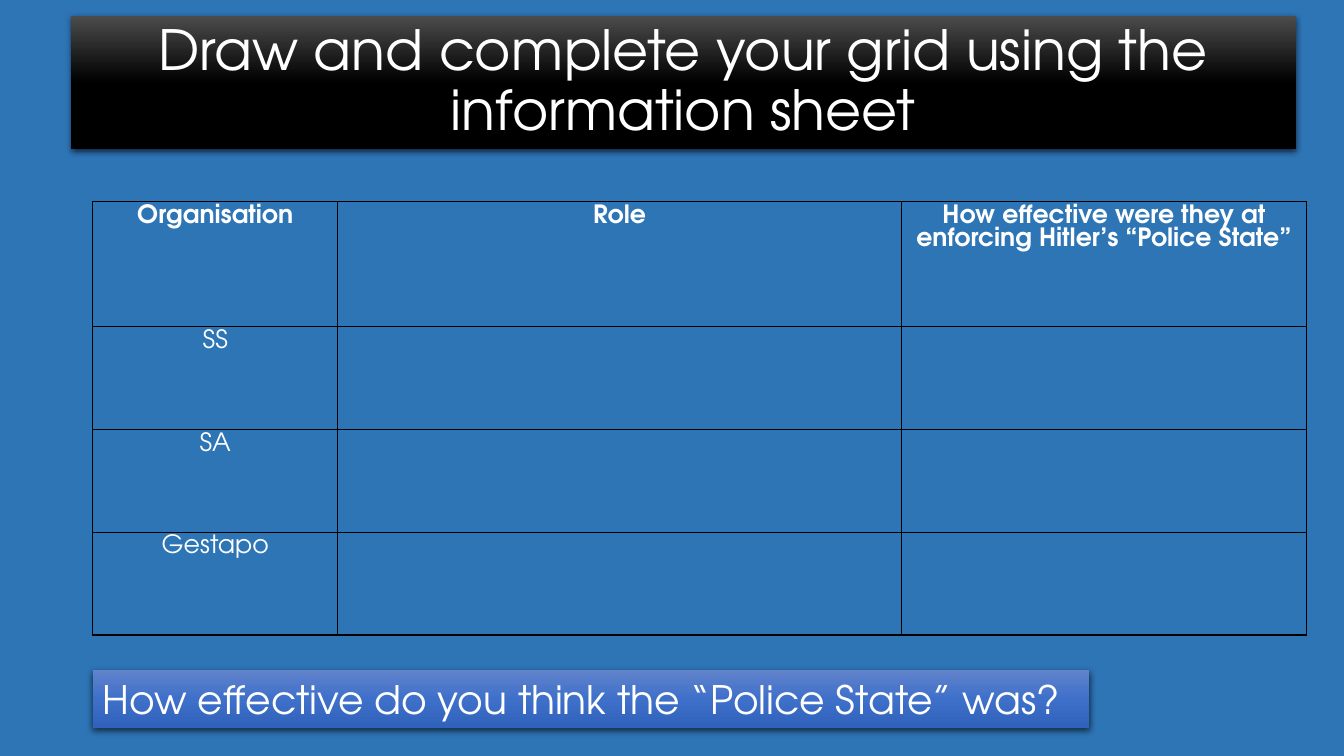
from copy import deepcopy

from pptx import Presentation
from pptx import util as u
from pptx.dml.color import RGBColor
from pptx.enum import text
from pptx.oxml import parse_xml
from pptx.oxml.ns import nsdecls, qn

PX = 9144  # EMU per px: 100 px to the inch
FONT = "TeX Gyre Adventor"
WHITE, BLACK, BLUE = "FFFFFF", "000000", "2E75B6"
HEADER_GRADIENT = ("4B4B4B", "000000", "000000")
QUESTION_GRADIENT = ("6183CB", "3E70CA", "3062BB")

COLUMN_WIDTHS = (243, 559, 402)
HEADER_HEIGHT, ROW_HEIGHT = 124, 102
HEADINGS = ("Organisation", "Role",
            "How effective were they at enforcing Hitler’s “Police State”")
ORGANISATIONS = ("SS", "SA", "Gestapo")


def px(length):
    return u.Emu(length * PX)


def color(value):
    return RGBColor.from_string(value)


def write(frame, words, size, align, bold=False, spacing=1.0):
    paragraph = frame.paragraphs[0]
    paragraph.alignment = align
    paragraph.line_spacing = spacing
    run = paragraph.add_run()
    run.text = words
    run.font.name = FONT
    run.font.size = u.Pt(size)
    run.font.bold = bold
    run.font.color.rgb = color(WHITE)


def style_panel(shape, colors):
    """Give a shape a three-stop vertical gradient and a soft shadow below."""
    fill = shape.fill
    fill.gradient()
    fill.gradient_angle = 270
    stop_list = shape.element.spPr.find(qn("a:gradFill")).find(qn("a:gsLst"))
    stop_list.append(deepcopy(stop_list[-1]))
    for index, (stop, value) in enumerate(zip(fill.gradient_stops, colors)):
        stop.position = index / 2
        stop.color.rgb = color(value)
    shape.element.spPr.append(parse_xml(
        f'<a:effectLst {nsdecls("a")}>'
        f'<a:outerShdw blurRad="{u.Pt(4.5)}" dist="{u.Pt(1.5)}" dir="5400000" '
        f'algn="ctr" rotWithShape="0"><a:srgbClr val="{BLACK}">'
        '<a:alpha val="63000"/></a:srgbClr></a:outerShdw></a:effectLst>'))


def add_title(slide, words):
    title = slide.shapes.title
    title.left, title.top, title.width, title.height = map(px, (70, 16, 1215, 132))
    style_panel(title, HEADER_GRADIENT)
    frame = title.text_frame
    frame.word_wrap = True
    frame.auto_size = text.MSO_AUTO_SIZE.NONE
    frame.vertical_anchor = text.MSO_ANCHOR.MIDDLE
    write(frame, words, 39.6, text.PP_ALIGN.CENTER, spacing=0.9)


def style_cell(cell):
    cell.margin_top = cell.margin_bottom = px(3)
    cell.margin_left = cell.margin_right = px(7)
    properties = cell._tc.get_or_add_tcPr()
    for side in ("lnL", "lnR", "lnT", "lnB"):
        properties.append(parse_xml(
            f'<a:{side} {nsdecls("a")} w="{u.Pt(1)}"><a:solidFill>'
            f'<a:srgbClr val="{BLACK}"/></a:solidFill></a:{side}>'))
    cell.fill.background()


def add_grid(slide):
    rows = [HEADINGS] + [(name, "", "") for name in ORGANISATIONS]
    heights = [HEADER_HEIGHT] + [ROW_HEIGHT] * len(ORGANISATIONS)
    table = slide.shapes.add_table(
        len(rows), len(COLUMN_WIDTHS), px(92), px(200),
        px(sum(COLUMN_WIDTHS)), px(sum(heights))).table
    table.first_row = table.horz_banding = False
    for column, width in zip(table.columns, COLUMN_WIDTHS):
        column.width = px(width)
    for row_index, (row, height) in enumerate(zip(rows, heights)):
        table.rows[row_index].height = px(height)
        for column_index, words in enumerate(row):
            cell = table.cell(row_index, column_index)
            style_cell(cell)
            if words:
                write(cell.text_frame, words, 18, text.PP_ALIGN.CENTER,
                      bold=row_index == 0)


def add_question(slide, words):
    box = slide.shapes.add_textbox(*map(px, (92, 665, 988, 57)))
    style_panel(box, QUESTION_GRADIENT)
    box.text_frame.word_wrap = True
    write(box.text_frame, words, 28, text.PP_ALIGN.LEFT)


def main():
    presentation = Presentation()
    presentation.slide_width, presentation.slide_height = px(1333), px(750)
    slide = presentation.slides.add_slide(presentation.slide_layouts[5])
    slide.background.fill.solid()
    slide.background.fill.fore_color.rgb = color(BLUE)
    add_title(slide, "Draw and complete your grid using the information sheet")
    add_grid(slide)
    add_question(slide, "How effective do you think the “Police State” was?")
    presentation.save("out.pptx")


if __name__ == "__main__":
    main()
